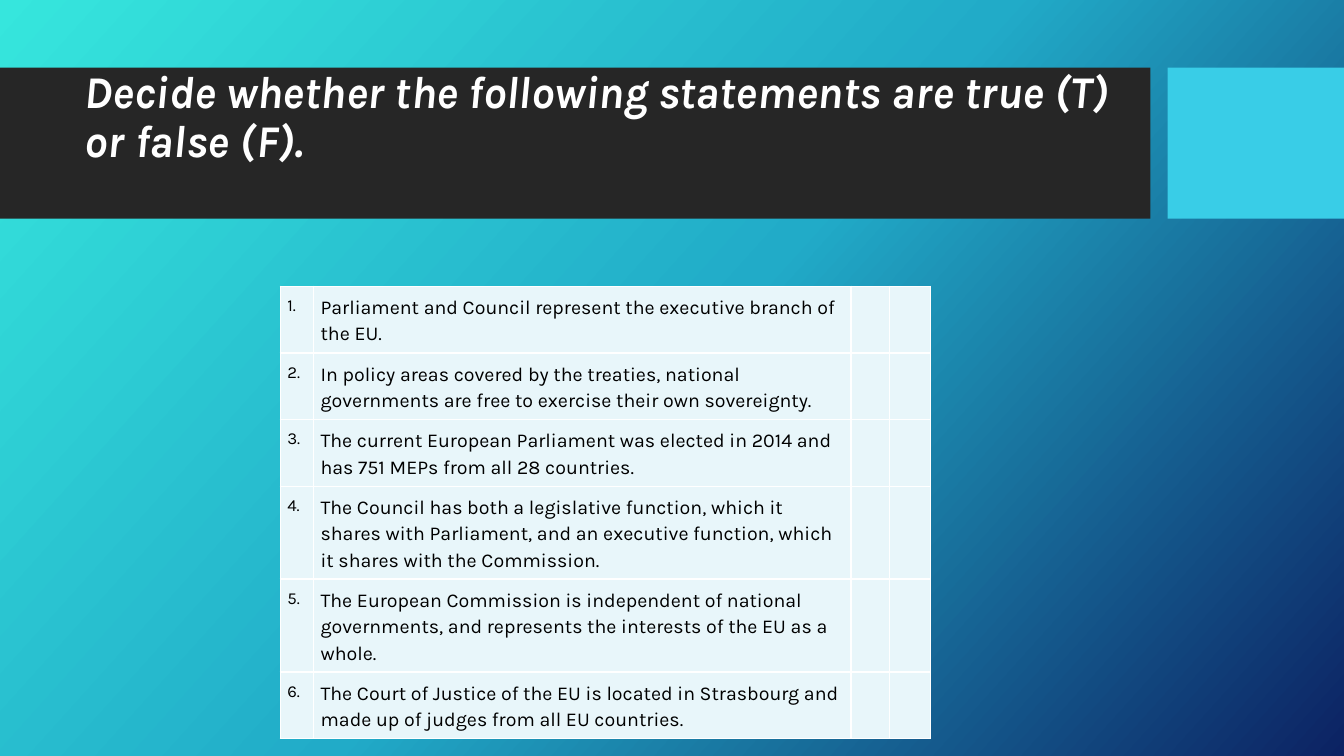
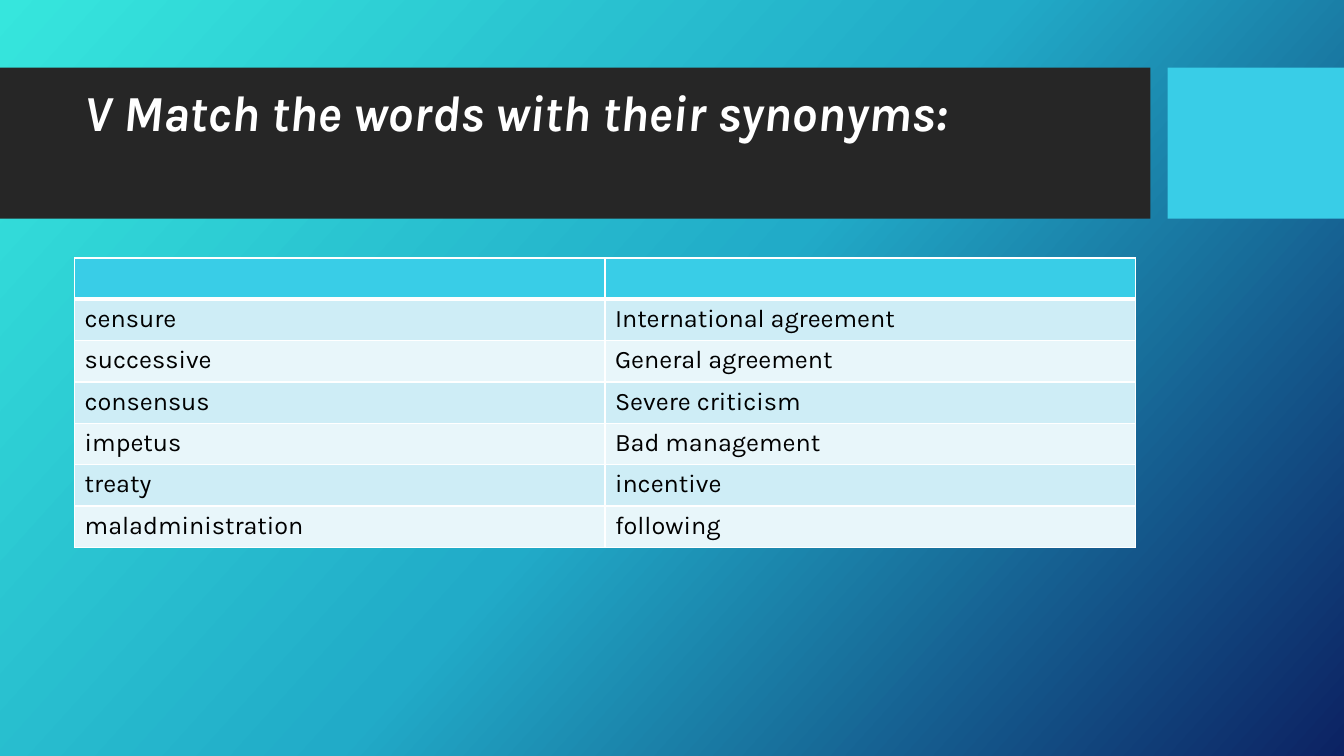
import copy

import lxml.etree
import pptx
import pptx.dml.color
import pptx.enum.shapes
import pptx.enum.text
import pptx.oxml.ns
import pptx.util

Inches = pptx.util.Inches
Pt = pptx.util.Pt
RGBColor = pptx.dml.color.RGBColor
qn = pptx.oxml.ns.qn

FONT = "Karla"
WHITE = RGBColor(0xFF, 0xFF, 0xFF)
BLACK = RGBColor(0x00, 0x00, 0x00)
CHARCOAL = RGBColor(0x26, 0x26, 0x26)
CYAN = RGBColor(0x39, 0xCD, 0xE7)
PALE_BLUE = RGBColor(0xCE, 0xED, 0xF6)
PALEST_BLUE = RGBColor(0xE8, 0xF6, 0xFA)
GRADIENT = [
    (0, RGBColor(0x36, 0xE6, 0xDD)),
    (0.5, RGBColor(0x21, 0xAB, 0xC8)),
    (1, RGBColor(0x0C, 0x22, 0x63)),
]

STATEMENTS = [
    "Parliament and Council represent the executive branch of the EU.",
    "In policy areas covered by the treaties, national governments are free "
    "to exercise their own sovereignty.",
    "The current European Parliament was elected in 2014 and has 751 MEPs "
    "from all 28 countries.",
    "The Council has both a legislative function, which it shares with "
    "Parliament, and an executive function, which it shares with the Commission.",
    "The European Commission is independent of national governments, and "
    "represents the interests of the EU as a whole.",
    "The Court of Justice of the EU is located in Strasbourg and made up of "
    "judges from all EU countries.",
]
STATEMENT_HEIGHTS = [0.66, 0.66, 0.66, 0.92, 0.92, 0.66]

WORD_PAIRS = [
    ("censure", "International agreement"),
    ("successive", "General agreement"),
    ("consensus", "Severe criticism"),
    ("impetus", "Bad management"),
    ("treaty", "incentive"),
    ("maladministration", "following"),
]


# Shared look: gradient background and title bands, kept on the layout

def set_background(layout):
    fill = layout.background.fill
    fill.gradient()
    fill.gradient_angle = 360 - 42
    stop_list = layout.element.find(".//" + qn("a:gsLst"))
    stop_list.insert(1, copy.deepcopy(stop_list[0]))
    for stop, (position, color) in zip(fill.gradient_stops, GRADIENT):
        stop.position = position
        stop.color.rgb = color


def add_band(slide, left, width, color):
    band = slide.shapes.add_shape(
        pptx.enum.shapes.MSO_SHAPE.RECTANGLE,
        Inches(left), Inches(0.67), Inches(width), Inches(1.5))
    band.shadow.inherit = False
    band.fill.solid()
    band.fill.fore_color.rgb = color
    band.line.fill.background()
    return band


def dress_layout(layout, slide):
    set_background(layout)
    for footer in list(layout.placeholders)[1:]:
        footer.element.getparent().remove(footer.element)
    bands = [add_band(slide, 0, 11.41, CHARCOAL),
             add_band(slide, 11.58, 1.75, CYAN)]
    for band in bands:
        layout.shapes.element.insert(2, band.element)


# Text and table parts

def add_run(paragraph, text, size, color=BLACK):
    run = paragraph.add_run()
    run.text = text
    run.font.name = FONT
    run.font.size = Pt(size)
    run.font.color.rgb = color
    return run


def set_title(slide, text, size):
    title = slide.shapes.title
    title.left, title.top = Inches(0.74), Inches(0.82)
    title.width, title.height = Inches(10.51), Inches(1.18)
    frame = title.text_frame
    frame.word_wrap = True
    frame.auto_size = pptx.enum.text.MSO_AUTO_SIZE.NONE
    frame.vertical_anchor = pptx.enum.text.MSO_ANCHOR.MIDDLE
    # Room for one more line below lifts the title within its band
    frame.margin_bottom = Inches(0.05) + Pt(size * 1.05)
    paragraph = frame.paragraphs[0]
    paragraph.alignment = pptx.enum.text.PP_ALIGN.LEFT
    paragraph.line_spacing = 0.9
    run = add_run(paragraph, text, size, WHITE)
    run.font.bold = True
    run.font.italic = True


def set_borders(cell, **widths):
    properties = cell._tc.get_or_add_tcPr()
    for index, side in enumerate("LRTB"):
        line = lxml.etree.Element(qn("a:ln" + side))
        line.set("w", str(Pt(widths.get(side, 1))))
        fill = lxml.etree.SubElement(line, qn("a:solidFill"))
        lxml.etree.SubElement(fill, qn("a:srgbClr")).set("val", str(WHITE))
        properties.insert(index, line)


def style_cell(cell, color, **border_widths):
    cell.fill.solid()
    cell.fill.fore_color.rgb = color
    set_borders(cell, **border_widths)


def add_grid(slide, left, top, widths, heights):
    table = slide.shapes.add_table(
        len(heights), len(widths), Inches(left), Inches(top),
        Inches(sum(widths)), Inches(sum(heights))).table
    table.first_row = False
    table.horz_banding = False
    for column, width in zip(table.columns, widths):
        column.width = Inches(width)
    for row, height in zip(table.rows, heights):
        row.height = Inches(height)
    return table


def write_statement_cell(cell, text, size):
    cell.margin_left = cell.margin_right = Inches(0.07)
    cell.margin_top = cell.margin_bottom = Inches(0.07)
    paragraph = cell.text_frame.paragraphs[0]
    paragraph.line_spacing = 1.15
    paragraph.space_after = Pt(8)
    add_run(paragraph, text, size)


# Slides

def build_true_false(slide):
    set_title(slide, "Decide whether the following statements are true (T) "
                     "or false (F).", 32.4)
    table = add_grid(slide, 2.78, 2.84, [0.33, 5.33, 0.38, 0.41],
                     STATEMENT_HEIGHTS)
    for cell in table.iter_cells():
        style_cell(cell, PALEST_BLUE)
    for row, statement in enumerate(STATEMENTS):
        write_statement_cell(table.cell(row, 0), f"{row + 1}.", 12)
        write_statement_cell(table.cell(row, 1), statement, 14)


def build_synonyms(slide):
    set_title(slide, "V Match the words with their synonyms:", 36)
    table = add_grid(slide, 0.74, 2.56, [5.26] * 2,
                     [0.41] * (len(WORD_PAIRS) + 1))
    for header in table.rows[0].cells:
        style_cell(header, CYAN, B=3)
    for row, pair in enumerate(WORD_PAIRS, start=1):
        color = PALE_BLUE if row % 2 else PALEST_BLUE
        for column, word in enumerate(pair):
            cell = table.cell(row, column)
            style_cell(cell, color, T=3 if row == 1 else 1)
            add_run(cell.text_frame.paragraphs[0], word, 18)


def main():
    deck = pptx.Presentation()
    deck.slide_width, deck.slide_height = Inches(13.33), Inches(7.5)
    layout = deck.slide_layouts.get_by_name("Title Only")
    true_false = deck.slides.add_slide(layout)
    synonyms = deck.slides.add_slide(layout)
    dress_layout(layout, true_false)
    build_true_false(true_false)
    build_synonyms(synonyms)
    deck.save("out.pptx")


if __name__ == "__main__":
    main()
